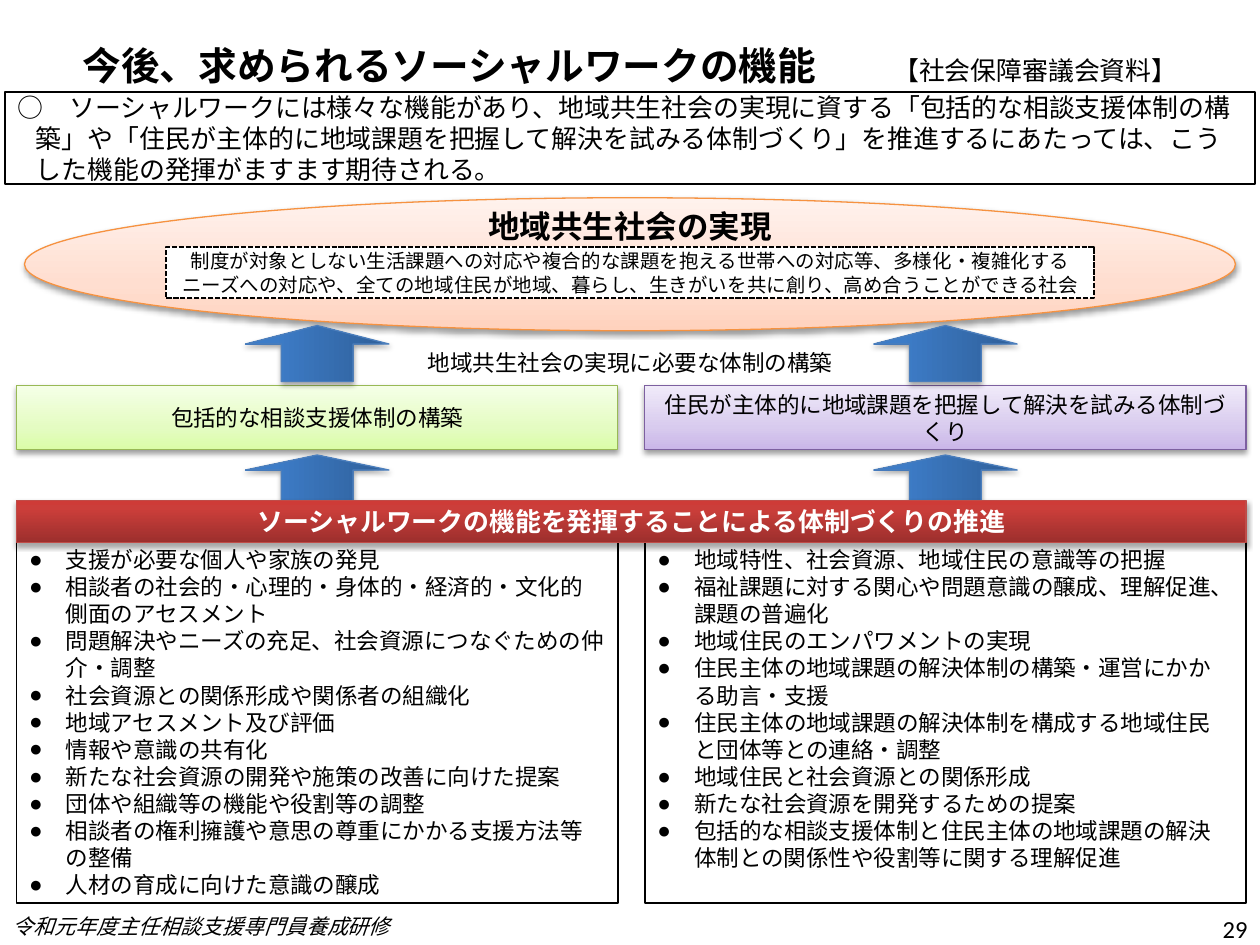
from dataclasses import dataclass

from pptx import Presentation
from pptx.dml.color import RGBColor
from pptx.enum.dml import MSO_LINE
from pptx.enum.shapes import MSO_SHAPE as Shape
from pptx.enum.text import MSO_ANCHOR as Anchor, MSO_AUTO_SIZE as AutoSize, PP_ALIGN as Align
from pptx.oxml import parse_xml
from pptx.oxml.ns import nsdecls, qn
from pptx.util import Pt


@dataclass(frozen=True)
class Style:
    """Gradient stops run from bottom to top; shadow is opacity in percent."""
    stops: tuple
    line: str
    shadow: int


@dataclass(frozen=True)
class Theme:
    latin: str = "Calibri"
    japanese: str = "Noto Sans CJK JP"
    black: str = "000000"
    white: str = "FFFFFF"
    title: float = 22.1
    goal: float = 18
    heading: float = 14.8
    page: float = 14
    body: float = 12.9
    footer: float = 12
    detail: float = 11.1
    inset: float = 7.2
    green: Style = Style(((0, "DAFDA7"), (35, "E4FCC2"), (100, "F5FFE7")), "98B955", 38)
    purple: Style = Style(((0, "C9B5E8"), (35, "D8CBEE"), (100, "F0EAF9")), "7D60A0", 38)
    orange: Style = Style(((0, "FFD2BD"), (35, "FFDED0"), (100, "FFF2ED")), "F69240", 38)
    blue: Style = Style(((0, "2F5F99"), (80, "3D7CC7"), (100, "3A7CCB")), "4B7EBC", 35)
    red: Style = Style(((0, "9C2F2D"), (80, "CB3E3A"), (100, "CE3B37")), "BF4C48", 35)


THEME = Theme()
COLUMN_WIDTH = 343.5
COLUMN_LEFTS = (9.5, 368.5)
FULL_WIDTH = COLUMN_LEFTS[1] + COLUMN_WIDTH - COLUMN_LEFTS[0]

SYSTEMS = (
    ("包括的な相談支援体制の構築", THEME.green),
    ("住民が主体的に地域課題を把握して解決を試みる体制づくり", THEME.purple),
)
FUNCTIONS = (
    (
        "支援が必要な個人や家族の発見",
        "相談者の社会的・心理的・身体的・経済的・文化的側面のアセスメント",
        "問題解決やニーズの充足、社会資源につなぐための仲介・調整",
        "社会資源との関係形成や関係者の組織化",
        "地域アセスメント及び評価",
        "情報や意識の共有化",
        "新たな社会資源の開発や施策の改善に向けた提案",
        "団体や組織等の機能や役割等の調整",
        "相談者の権利擁護や意思の尊重にかかる支援方法等の整備",
        "人材の育成に向けた意識の醸成",
    ),
    (
        "地域特性、社会資源、地域住民の意識等の把握",
        "福祉課題に対する関心や問題意識の醸成、理解促進、課題の普遍化",
        "地域住民のエンパワメントの実現",
        "住民主体の地域課題の解決体制の構築・運営にかかる助言・支援",
        "住民主体の地域課題の解決体制を構成する地域住民と団体等との連絡・調整",
        "地域住民と社会資源との関係形成",
        "新たな社会資源を開発するための提案",
        "包括的な相談支援体制と住民主体の地域課題の解決体制との関係性や役割等に関する理解促進",
    ),
)


def place(shape, left, top, width, height):
    shape.left, shape.top, shape.width, shape.height = map(Pt, (left, top, width, height))


def set_font(font, size, color=THEME.black, bold=False, italic=False, name=THEME.latin):
    font.name, font.size, font.bold, font.italic = name, Pt(size), bold, italic
    font.color.rgb = RGBColor.from_string(color)
    font._element.find(qn("a:latin")).addnext(
        parse_xml(f'<a:ea {nsdecls("a")} typeface="{THEME.japanese}"/>'))


def set_frame(shape, anchor=Anchor.MIDDLE, top=0):
    frame = shape.text_frame
    frame.word_wrap, frame.auto_size = True, AutoSize.NONE
    frame.vertical_anchor = anchor
    frame.margin_left = frame.margin_right = Pt(THEME.inset)
    frame.margin_top, frame.margin_bottom = Pt(top), 0
    return frame


def write(shape, text, size, align=Align.CENTER, **font):
    paragraph = set_frame(shape).paragraphs[0]
    paragraph.text, paragraph.alignment = text, align
    set_font(paragraph.font, size, **font)
    return paragraph


def set_indent(paragraph, points):
    """Hang the first line back by the given indent."""
    properties = paragraph._p.get_or_add_pPr()
    properties.set("marL", str(Pt(points)))
    properties.set("indent", str(-Pt(points)))
    return properties


def outline(shape, color=THEME.black, width=1):
    shape.line.color.rgb = RGBColor.from_string(color)
    shape.line.width = Pt(width)


def add_text(slide, box, text, size, **options):
    write(slide.shapes.add_textbox(*map(Pt, box)), text, size, **options)


def add_frame(slide, box, fill=None):
    """Add a black-edged rectangle, empty or filled."""
    shape = slide.shapes.add_shape(Shape.RECTANGLE, *map(Pt, box))
    shape.shadow.inherit = False
    if fill:
        shape.fill.solid()
        shape.fill.fore_color.rgb = RGBColor.from_string(fill)
    else:
        shape.fill.background()
    outline(shape)
    return shape


def add_glossy(slide, kind, box, style):
    """Add a shape with a vertical gradient and a soft shadow below."""
    shape = slide.shapes.add_shape(kind, *map(Pt, box))
    outline(shape, style.line, 0.75)
    shape.fill.gradient()
    properties = shape._element.spPr
    stops = "".join(f'<a:gs pos="{position * 1000}"><a:srgbClr val="{color}"/></a:gs>'
                    for position, color in style.stops)
    properties.replace(properties.find(qn("a:gradFill")), parse_xml(
        f'<a:gradFill {nsdecls("a")} rotWithShape="1"><a:gsLst>{stops}</a:gsLst>'
        '<a:lin ang="16200000" scaled="0"/></a:gradFill>'))
    shape.shadow.inherit = False
    properties.find(qn("a:effectLst")).append(parse_xml(
        f'<a:outerShdw {nsdecls("a")} blurRad="{Pt(3.1)}" dist="{Pt(1.7)}" dir="5400000" '
        f'rotWithShape="0"><a:srgbClr val="{THEME.black}">'
        f'<a:alpha val="{style.shadow * 1000}"/></a:srgbClr></a:outerShdw>'))
    return shape


def add_up_arrow(slide, center_x, center_y, length):
    breadth = 82
    box = (center_x - length / 2, center_y - breadth / 2, length, breadth)
    arrow = add_glossy(slide, Shape.RIGHT_ARROW, box, THEME.blue)
    arrow.adjustments[0], arrow.adjustments[1] = 0.5, 0.33
    arrow.rotation = 270


def fill_title(title):
    place(title, 0, 24, 720, 26)
    paragraph = set_frame(title).paragraphs[0]
    paragraph.alignment = Align.CENTER
    for text, size, bold in (("今後、求められるソーシャルワークの機能　　", THEME.title, True),
                             ("【社会保障審議会資料】", THEME.heading, False)):
        run = paragraph.add_run()
        run.text = text
        set_font(run.font, size, bold=bold)


def fill_list(body, left, items):
    place(body, left, 294, COLUMN_WIDTH, 222)
    outline(body)
    frame = set_frame(body, Anchor.TOP, top=18)
    frame.text = "\n".join(items)
    for paragraph in frame.paragraphs:
        paragraph.space_before = Pt(0)
        set_indent(paragraph, 21).append(parse_xml(f'<a:buChar {nsdecls("a")} char="●"/>'))
        set_font(paragraph.font, THEME.body)


def main():
    presentation = Presentation()
    presentation.slide_width, presentation.slide_height = Pt(720), Pt(540)
    slide = presentation.slides.add_slide(presentation.slide_layouts[3])
    title, *bodies = slide.placeholders
    fill_title(title)
    for body, left, items, (system, style) in zip(bodies, COLUMN_LEFTS, FUNCTIONS, SYSTEMS):
        fill_list(body, left, items)
        box = (left, 220.5, COLUMN_WIDTH, 36.5)
        write(add_glossy(slide, Shape.RECTANGLE, box, style), system, THEME.body)

    add_glossy(slide, Shape.OVAL, (14, 113, 692, 76), THEME.orange)
    society = add_frame(slide, (95, 141, 530, 29.5), THEME.white)
    society.line.dash_style = MSO_LINE.SQUARE_DOT
    write(society, "制度が対象としない生活課題への対応や複合的な課題を抱える世帯への対応等、多様化・複雑化する"
          "ニーズへの対応や、全ての地域住民が地域、暮らし、生きがいを共に創り、高め合うことができる社会", THEME.detail)
    add_text(slide, (14, 113, 692, 32), "地域共生社会の実現", THEME.goal, bold=True)

    for left in COLUMN_LEFTS:
        for center_y, length in ((202, 32), (273, 26)):
            add_up_arrow(slide, left + COLUMN_WIDTH / 2, center_y, length)
    add_text(slide, (207, 196.5, 306, 21), "地域共生社会の実現に必要な体制の構築", THEME.body)
    banner = add_glossy(slide, Shape.RECTANGLE, (COLUMN_LEFTS[0], 286, FULL_WIDTH, 24), THEME.red)
    write(banner, "ソーシャルワークの機能を発揮することによる体制づくりの推進", THEME.heading,
          color=THEME.white, bold=True)

    summary = write(
        add_frame(slide, (3, 52.5, 714, 52.5)),
        "○　ソーシャルワークには様々な機能があり、地域共生社会の実現に資する「包括的な相談支援体制の構築」や"
        "「住民が主体的に地域課題を把握して解決を試みる体制づくり」を推進するにあたっては、"
        "こうした機能の発揮がますます期待される。", THEME.heading, align=Align.LEFT)
    set_indent(summary, 10.5)
    add_text(slide, (0, 518, 244, 22), "令和元年度主任相談支援専門員養成研修", THEME.footer,
             align=Align.LEFT, italic=True, name=THEME.japanese)
    add_text(slide, (552, 520, 168, 22), "29", THEME.page, align=Align.RIGHT)
    presentation.save("out.pptx")


if __name__ == "__main__":
    main()
